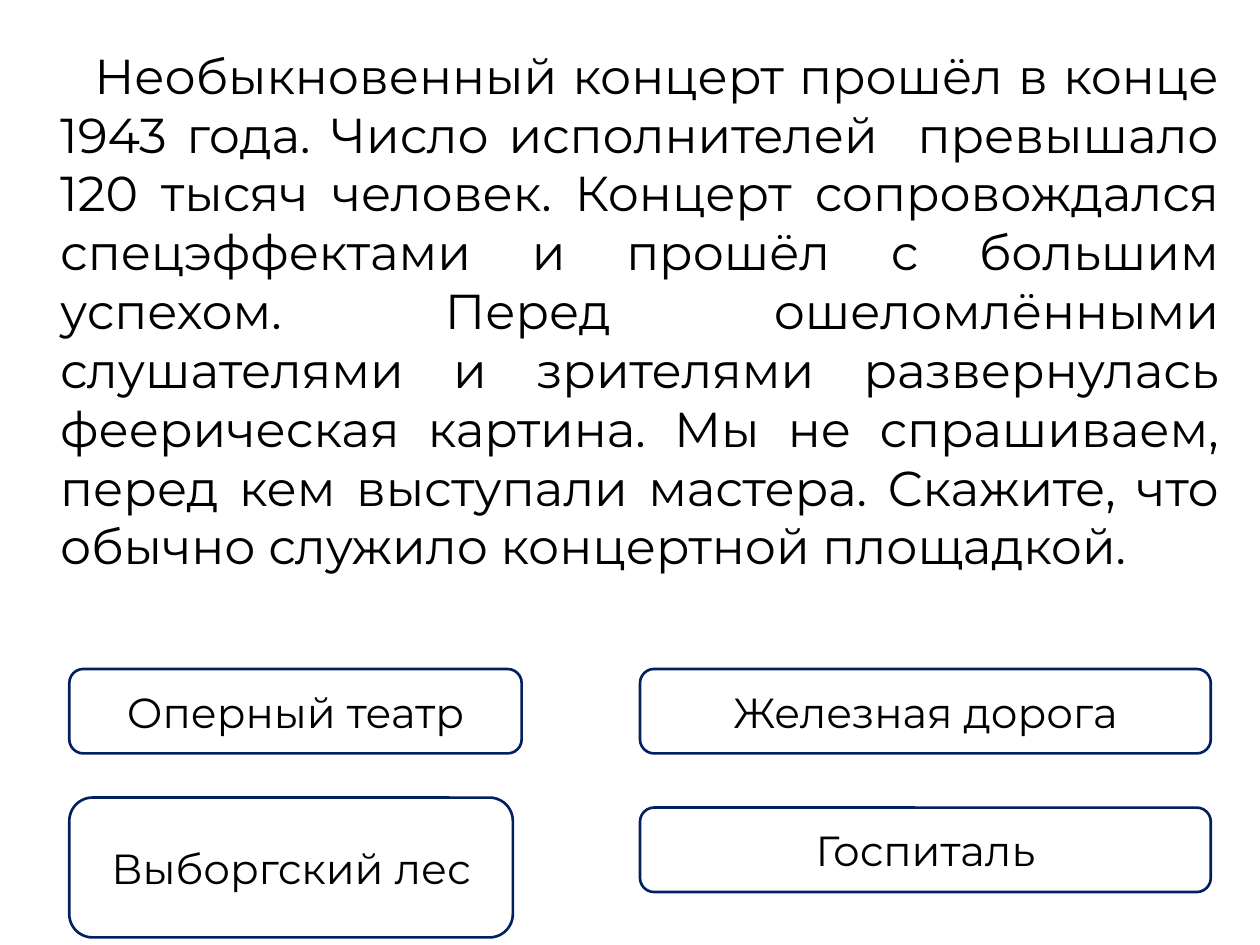
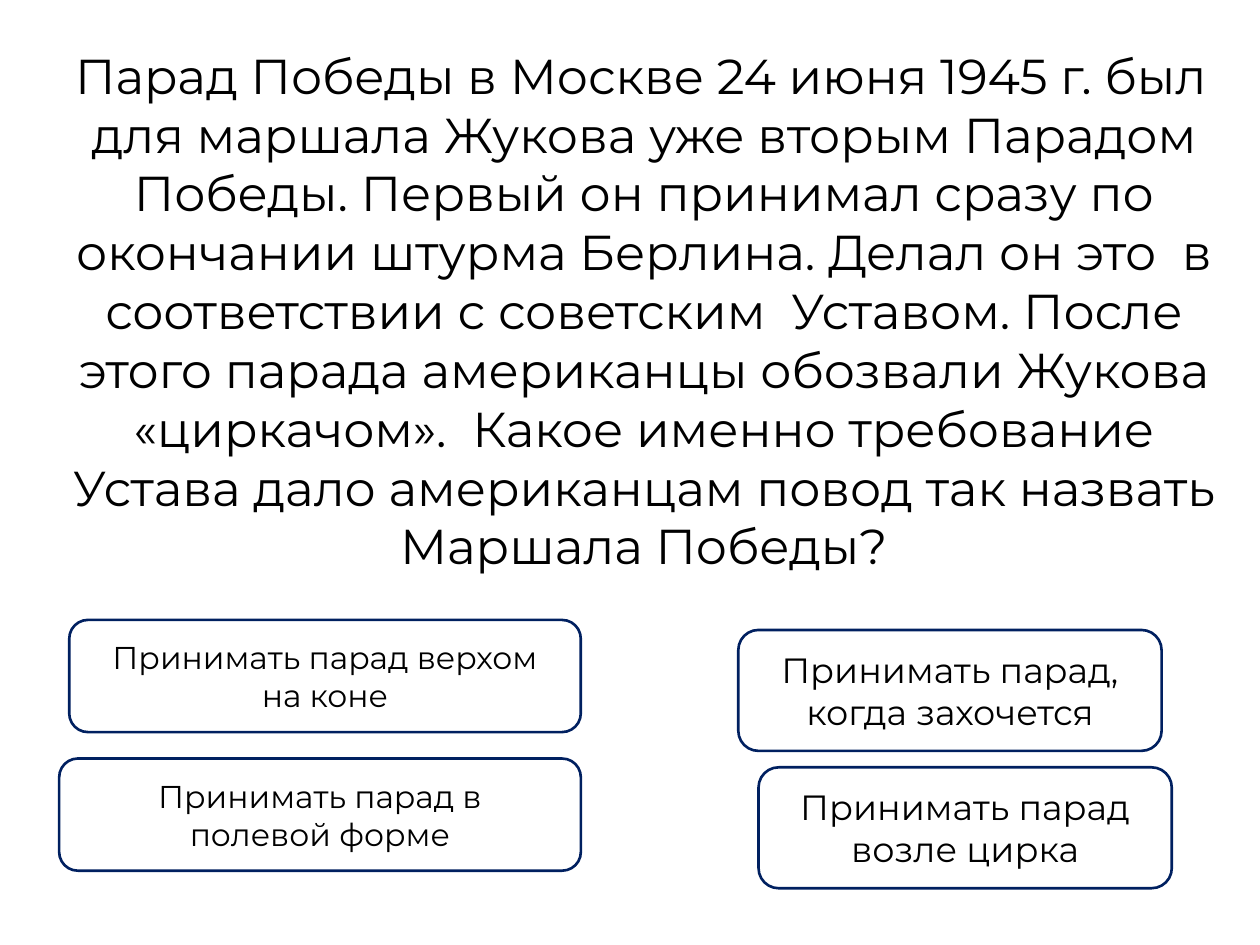
from pptx import Presentation
from pptx.dml.color import RGBColor
from pptx.enum.shapes import MSO_SHAPE
from pptx.enum.text import MSO_ANCHOR, PP_ALIGN
from pptx.util import Inches, Pt

BLACK = RGBColor(0x00, 0x00, 0x00)
NAVY = RGBColor(0x00, 0x20, 0x60)
FONT = "Montserrat"
CENTER, JUSTIFY = PP_ALIGN.CENTER, PP_ALIGN.JUSTIFY
MIDDLE = MSO_ANCHOR.MIDDLE
ROUNDED = MSO_SHAPE.ROUNDED_RECTANGLE
BLANK_LAYOUT = 6

QUESTION_TOP = 0.31
QUESTION_MARGIN = 0.38

# Each slide: question, its format, and answers as (text, left, top, width, height, size)
QUIZ = [
    {
        "question": "Необыкновенный концерт прошёл в конце 1943 года. "
                    "Число исполнителей  превышало 120 тысяч человек. "
                    "Концерт сопровождался спецэффектами и прошёл с большим успехом. "
                    "Перед ошеломлёнными слушателями и зрителями развернулась "
                    "феерическая картина. Мы не спрашиваем, перед кем выступали "
                    "мастера. Скажите, что обычно служило концертной площадкой.",
        "width": 9.77, "height": 4.84, "align": JUSTIFY, "indent": 0.27,
        "answers": [
            ("Оперный театр", 0.55, 5.31, 3.59, 0.67, 24),
            ("Выборгский лес", 0.55, 6.33, 3.52, 1.11, 24),
            ("Железная дорога", 5.08, 5.31, 4.53, 0.67, 24),
            ("Госпиталь", 5.08, 6.41, 4.53, 0.67, 24),
        ],
    },
    {
        "question": "Парад Победы в Москве 24 июня 1945 г. был для маршала Жукова "
                    "уже вторым Парадом Победы. Первый он принимал сразу по "
                    "окончании штурма Берлина. Делал он это  в соответствии с "
                    "советским  Уставом. После этого парада американцы обозвали "
                    "Жукова «циркачом».  Какое именно требование Устава дало "
                    "американцам повод так назвать Маршала Победы?",
        "width": 9.84, "height": 4.37, "align": CENTER, "indent": -0.05,
        "answers": [
            ("Принимать парад верхом на коне", 0.55, 4.92, 4.06, 0.89, 18),
            ("Принимать парад в полевой форме", 0.47, 6.02, 4.14, 0.89, 18),
            ("Принимать парад, когда захочется", 5.86, 5, 3.36, 0.96, 20),
            ("Принимать парад возле цирка", 6.02, 6.09, 3.28, 0.96, 20),
        ],
    },
]


def write_text(sp, text, size, align=CENTER, margin=0, indent=0):
    """Put one formatted paragraph into a shape; margin and indent in inches."""
    tf = sp.text_frame
    tf.word_wrap = True
    p = tf.paragraphs[0]
    p.alignment = align
    pPr = p._p.get_or_add_pPr()
    pPr.set("marL", str(Inches(margin)))
    pPr.set("indent", str(Inches(indent)))
    r = p.add_run()
    r.text = text
    r.font.name = FONT
    r.font.size = Pt(size)
    r.font.color.rgb = BLACK
    return tf


prs = Presentation()
prs.slide_width, prs.slide_height = Inches(10), Inches(7.5)

for quiz in QUIZ:
    s = prs.slides.add_slide(prs.slide_layouts[BLANK_LAYOUT])

    # Question
    sp = s.shapes.add_textbox(0, Inches(QUESTION_TOP),
                              Inches(quiz["width"]), Inches(quiz["height"]))
    write_text(sp, quiz["question"], 28, align=quiz["align"],
               margin=QUESTION_MARGIN, indent=quiz["indent"])

    # Answer boxes
    for text, left, top, width, height, size in quiz["answers"]:
        sp = s.shapes.add_shape(ROUNDED, Inches(left), Inches(top),
                                Inches(width), Inches(height))
        sp.shadow.inherit = False
        sp.fill.background()
        sp.line.color.rgb = NAVY
        sp.line.width = Pt(1.5)
        tf = write_text(sp, text, size)
        tf.vertical_anchor = MIDDLE
        tf.margin_left = tf.margin_right = Inches(0.2)
        tf.margin_top = tf.margin_bottom = Inches(0.1)

prs.save("out.pptx")
